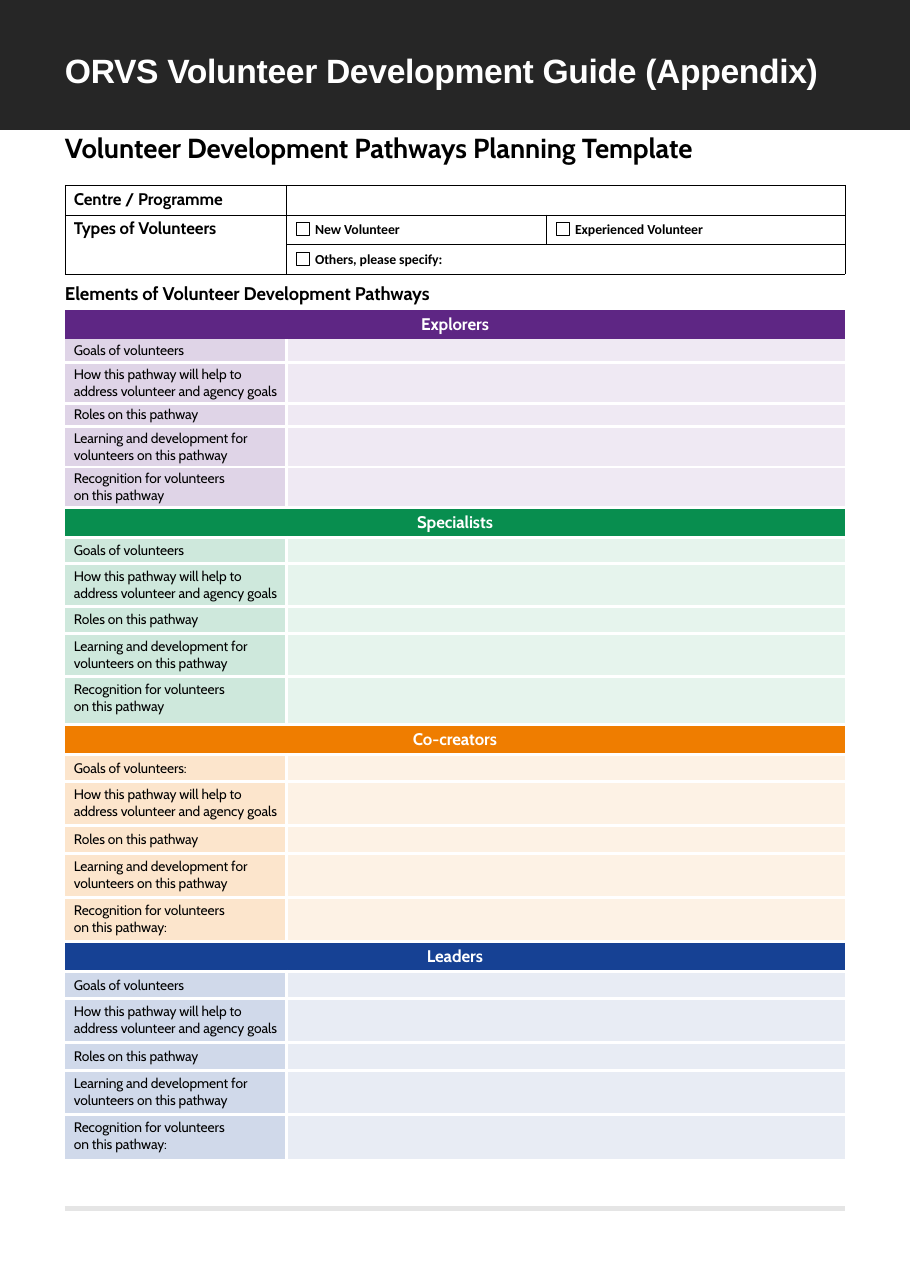
from lxml import etree
from pptx import Presentation, util as u
from pptx.dml.color import RGBColor
from pptx.enum import shapes, text
from pptx.oxml import ns

PX = 9144
LEFT = 59
TABLE_WIDTH = 708
LABEL_WIDTH = 201
NO_STYLE = "{2D5ABB26-0587-4C30-8999-92F81FD0307C}"

COLORS = {"black": "000000", "white": "FFFFFF", "banner": "262626", "rule": "E5E5E5"}

FORMATS = {
    "banner": {"name": "Arial", "size": u.Pt(22), "bold": True},
    "title": {"name": "Cabin", "size": u.Pt(18), "bold": True},
    "subtitle": {"name": "Cabin", "size": u.Pt(12), "bold": True},
    "heading": {"name": "Cabin", "size": u.Pt(11), "bold": True},
    "body": {"name": "Cabin", "size": u.Pt(9), "bold": False},
    "option": {"name": "Calibri", "size": u.Pt(9), "bold": True},
}

PATHWAYS = [
    {"name": "Explorers", "colors": ("5E2684", "DFD4E7", "EFE9F3"),
     "heights": (27, 21, 37, 21, 37, 37), "insets": (3, 3), "ends": ("", "")},
    {"name": "Specialists", "colors": ("088E4F", "CEE8DC", "E6F4ED"),
     "heights": (27, 24, 39, 24, 39, 44), "insets": (4, 4), "ends": ("", "")},
    {"name": "Co-creators", "colors": ("EF7D00", "FCE5CC", "FDF2E5"),
     "heights": (27, 25, 40, 25, 40, 40), "insets": (5, 4), "ends": (":", ":")},
    {"name": "Leaders", "colors": ("164194", "D0D9EA", "E8ECF4"),
     "heights": (27, 25, 40, 25, 40, 40), "insets": (5, 4), "ends": ("", ":")},
]


def px(value):
    return u.Emu(value * PX)


def color(value):
    return RGBColor.from_string(value)


def set_values(target, values):
    for name, value in values.items():
        setattr(target, name, value)


def write(para, words, style, ink, spacing=-5):
    span = para.add_run()
    span.text = words
    set_values(span.font, FORMATS[style])
    span.font.color.rgb = color(ink)
    span._r.get_or_add_rPr().set("spc", str(spacing))


def add_text(page, top, width, height, words, style, ink, spacing=-5):
    box = page.shapes.add_textbox(px(58), px(top), px(width), px(height))
    frame = box.text_frame
    set_values(frame, {"word_wrap": True, "margin_left": px(1), "margin_top": px(1),
                       "margin_right": 0, "margin_bottom": 0})
    para = frame.paragraphs[0]
    para.space_before = u.Pt(1)
    write(para, words, style, ink, spacing)


def add_box(page, left, top, width, height, fill=None, line=None):
    box = page.shapes.add_shape(shapes.MSO_SHAPE.RECTANGLE,
                                px(left), px(top), px(width), px(height))
    box.shadow.inherit = False
    if fill:
        box.fill.solid()
        box.fill.fore_color.rgb = color(fill)
    else:
        box.fill.background()
    if line:
        box.line.color.rgb = color(line)
        box.line.width = u.Pt(0.5)
    else:
        box.line.fill.background()


def add_rule(page, top):
    rule = page.shapes.add_connector(shapes.MSO_CONNECTOR.STRAIGHT, px(LEFT), px(top),
                                     px(LEFT + TABLE_WIDTH), px(top))
    rule.line.color.rgb = color(COLORS["rule"])
    rule.line.width = u.Pt(3)
    etree.SubElement(rule._element.spPr, ns.qn("a:effectLst"))


def add_grid(page, top, widths, heights):
    table = page.shapes.add_table(len(heights), len(widths), px(LEFT), px(top),
                                  px(sum(widths)), px(sum(heights))).table
    set_values(table, {"first_row": False, "horz_banding": False})
    table._tbl.tblPr[0].text = NO_STYLE
    for column, width in zip(table.columns, widths):
        column.width = px(width)
    for row, height in zip(table.rows, heights):
        row.height = px(height)
    for cell in table.iter_cells():
        set_values(cell, {"margin_left": 0, "margin_top": 0,
                          "margin_right": 0, "margin_bottom": 0})
        cell.text_frame.paragraphs[0]._p.get_or_add_endParaRPr().set("sz", "800")
    return table


def add_borders(cell, edges, ink, points):
    properties = cell._tc.get_or_add_tcPr()
    for edge in edges:
        line = etree.SubElement(properties, ns.qn(f"a:ln{edge}"), w=str(u.Pt(points)))
        fill = etree.SubElement(line, ns.qn("a:solidFill"))
        etree.SubElement(fill, ns.qn("a:srgbClr"), val=ink)


def fill_cell(cell, fill):
    cell.fill.solid()
    cell.fill.fore_color.rgb = color(fill)


def write_cell(cell, words, style, ink, left, top, right=0):
    set_values(cell, {"margin_left": px(left), "margin_top": px(top),
                      "margin_right": px(right)})
    para = cell.text_frame.paragraphs[0]
    write(para, words, style, ink)
    return para


def add_details(page):
    table = add_grid(page, 168, (LABEL_WIDTH, 236, 271), (27, 27, 27))
    for cell in table.iter_cells():
        add_borders(cell, "LRTB", COLORS["black"], 0.25)
    for first, last in (((0, 1), (0, 2)), ((1, 0), (2, 0)), ((2, 1), (2, 2))):
        table.cell(*first).merge(table.cell(*last))
    for row, label, top in ((0, "Centre / Programme", 4), (1, "Types of Volunteers", 3)):
        write_cell(table.cell(row, 0), label, "heading", COLORS["black"], 8, top)
    options = ((1, 1, "New Volunteer"), (1, 2, "Experienced Volunteer"),
               (2, 1, "Others, please specify:"))
    for row, column, label in options:
        write_cell(table.cell(row, column), label, "option", COLORS["black"], 26, 6)
    for left, top in ((269, 202), (505, 202), (269, 229)):
        add_box(page, left, top, 12, 12, line=COLORS["black"])


def add_pathway(table, start, pathway):
    heading, label_fill, answer_fill = pathway["colors"]
    goal_end, recognition_end = pathway["ends"]
    single, double = pathway["insets"]
    title = table.cell(start, 0)
    title.merge(table.cell(start, 1))
    fill_cell(title, heading)
    para = write_cell(title, pathway["name"], "heading", COLORS["white"], 0, 4)
    para.alignment = text.PP_ALIGN.CENTER
    labels = (
        ("Goals of volunteers" + goal_end, single, 0),
        ("How this pathway will help to address volunteer and agency goals", double, 0),
        ("Roles on this pathway", single, 0),
        ("Learning and development for volunteers on this pathway", double, 0),
        ("Recognition for volunteers on this pathway" + recognition_end, double, 45),
    )
    for row, (label, top, right) in enumerate(labels, start + 1):
        fill_cell(table.cell(row, 0), label_fill)
        fill_cell(table.cell(row, 1), answer_fill)
        para = write_cell(table.cell(row, 0), label, "body", COLORS["black"], 8, top, right)
        para.line_spacing = 1.02 if len(label) > 25 else 1.0


def add_pathways(page):
    heights = [height for pathway in PATHWAYS for height in pathway["heights"]]
    table = add_grid(page, 281, (LABEL_WIDTH, TABLE_WIDTH - LABEL_WIDTH), heights)
    size = len(PATHWAYS[0]["heights"])
    for row in range(len(heights)):
        for column, side in enumerate("RL"):
            edges = side if row % size else ""
            edges += "T" if row > 1 else ""
            edges += "B" if 0 < row < len(heights) - 1 else ""
            add_borders(table.cell(row, column), edges, COLORS["white"], 2.25)
    for index, pathway in enumerate(PATHWAYS):
        add_pathway(table, index * size, pathway)


def main():
    deck = Presentation()
    set_values(deck, {"slide_width": px(826), "slide_height": px(1169)})
    page = deck.slides.add_slide(deck.slide_layouts[6])
    add_box(page, 0, 0, 826, 118, fill=COLORS["banner"])
    add_text(page, 44, 722, 38, "ORVS Volunteer Development Guide (Appendix)",
             "banner", COLORS["white"], -20)
    add_text(page, 118, 709, 32, "Volunteer Development Pathways Planning Template",
             "title", COLORS["black"])
    add_pathways(page)
    add_details(page)
    add_text(page, 255, 459, 22, "Elements of Volunteer Development Pathways",
             "subtitle", COLORS["black"])
    add_rule(page, 1097)
    deck.save("out.pptx")


if __name__ == "__main__":
    main()
